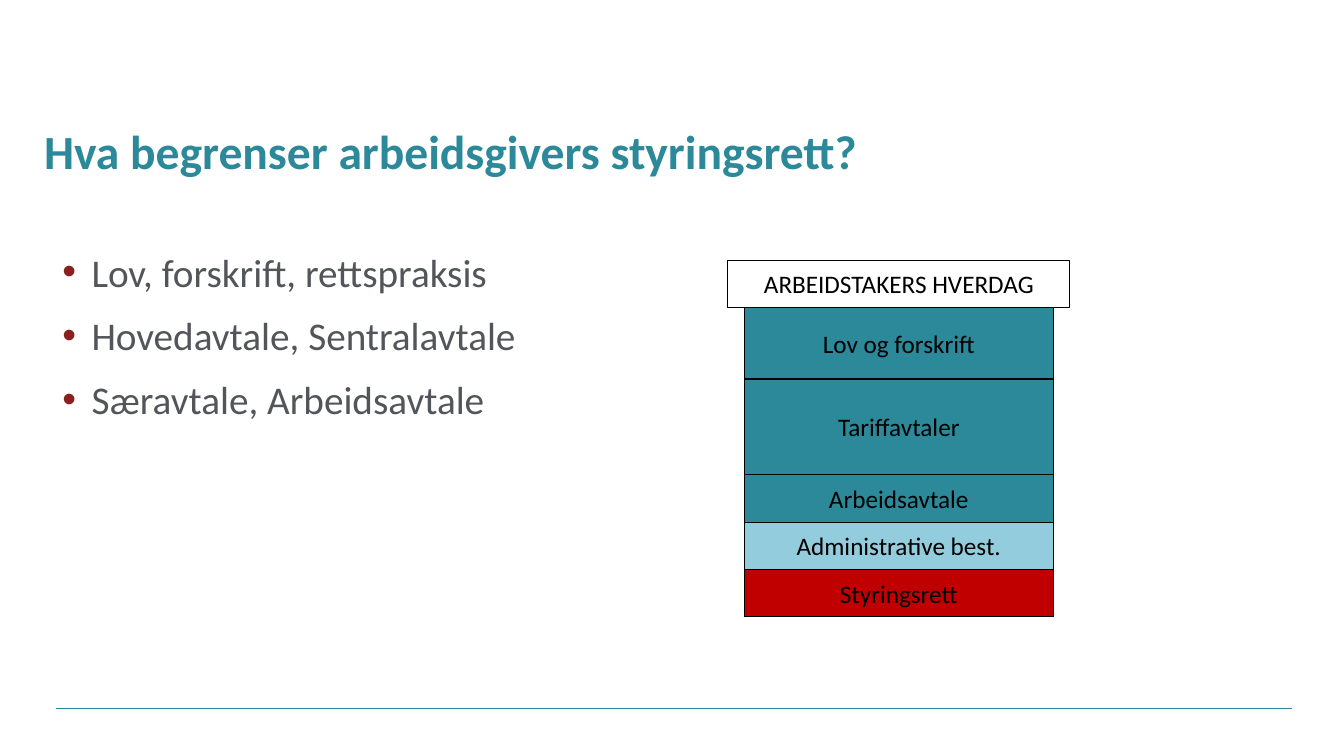
from dataclasses import dataclass

from lxml import etree
from pptx import Presentation
from pptx.dml.color import RGBColor
from pptx.enum.shapes import MSO_CONNECTOR, MSO_SHAPE
from pptx.enum.text import MSO_ANCHOR, PP_ALIGN
from pptx.oxml.ns import qn
from pptx.slide import Slide
from pptx.text.text import TextFrame, _Paragraph
from pptx.util import Inches, Pt

STRAIGHT = MSO_CONNECTOR.STRAIGHT
RECTANGLE = MSO_SHAPE.RECTANGLE
TOP, MIDDLE, BOTTOM = MSO_ANCHOR.TOP, MSO_ANCHOR.MIDDLE, MSO_ANCHOR.BOTTOM
LEFT, CENTER = PP_ALIGN.LEFT, PP_ALIGN.CENTER


@dataclass(frozen=True)
class Theme:
    font: str = "Calibri"
    teal: str = "2B899A"
    light_blue: str = "93CDDD"
    red: str = "C00000"
    white: str = "FFFFFF"
    black: str = "000000"
    gray: str = "52565A"
    bullet: str = "8B1F1E"
    title_size: float = 34
    body_size: float = 28
    label_size: float = 18


@dataclass(frozen=True)
class Layer:
    text: str
    height: float
    fill: str
    width: float = 3.07


THEME = Theme()
STACK_CENTER = 8.915
STACK_TOP = 2.58
LAYERS = [
    Layer("ARBEIDSTAKERS HVERDAG", 0.47, THEME.white, 3.39),
    Layer("Lov og forskrift", 0.71, THEME.teal),
    Layer("Tariffavtaler", 0.95, THEME.teal),
    Layer("Arbeidsavtale", 0.47, THEME.teal),
    Layer("Administrative best.", 0.47, THEME.light_blue),
    Layer("Styringsrett", 0.47, THEME.red),
]
LIMITS = [
    "Lov, forskrift, rettspraksis",
    "Hovedavtale, Sentralavtale",
    "Særavtale, Arbeidsavtale",
]


def rgb(color: str) -> RGBColor:
    return RGBColor.from_string(color)


def write(p: _Paragraph, text: str, size: float, color: str,
          bold: bool = False, align: PP_ALIGN = LEFT) -> None:
    p.alignment = align
    r = p.add_run()
    r.text = text
    formats = {"name": THEME.font, "size": Pt(size), "bold": bold}
    for name, value in formats.items():
        setattr(r.font, name, value)
    r.font.color.rgb = rgb(color)


def add_bullet(p: _Paragraph) -> None:
    pPr = p._p.get_or_add_pPr()
    indent = Inches(0.29)
    pPr.set("marL", str(indent))
    pPr.set("indent", str(-indent))
    color = etree.SubElement(pPr, qn("a:buClr"))
    etree.SubElement(color, qn("a:srgbClr"), val=THEME.bullet)
    etree.SubElement(pPr, qn("a:buFont"), typeface="Arial")
    etree.SubElement(pPr, qn("a:buChar"), char="•")


def add_text_box(s: Slide, left: float, top: float, width: float,
                 height: float, anchor: MSO_ANCHOR) -> TextFrame:
    box = s.shapes.add_textbox(*map(Inches, (left, top, width, height)))
    tf = box.text_frame
    tf.word_wrap = True
    tf.vertical_anchor = anchor
    return tf


def add_footer_line(s: Slide) -> None:
    ends = map(Inches, (0.56, 7.03, 12.81, 7.03))
    line = s.shapes.add_connector(STRAIGHT, *ends)
    line.line.color.rgb = rgb(THEME.teal)
    line.line.width = Pt(1)
    etree.SubElement(line._element.spPr, qn("a:effectLst"))


def add_title(s: Slide) -> None:
    tf = add_text_box(s, 0.34, 0.58, 10.7, 1.25, BOTTOM)
    write(tf.paragraphs[0], "Hva begrenser arbeidsgivers styringsrett?",
          THEME.title_size, THEME.teal, bold=True)


def add_limits(s: Slide) -> None:
    tf = add_text_box(s, 0.52, 2.41, 6.34, 4.79, TOP)
    for i, text in enumerate(LIMITS):
        p = tf.add_paragraph() if i else tf.paragraphs[0]
        add_bullet(p)
        if i:
            p.space_before = Pt(12)
        write(p, text, THEME.body_size, THEME.gray)


def add_layer(s: Slide, layer: Layer, top: float) -> None:
    left = STACK_CENTER - layer.width / 2
    bounds = map(Inches, (left, top, layer.width, layer.height))
    sp = s.shapes.add_shape(RECTANGLE, *bounds)
    sp.shadow.inherit = False
    sp.fill.solid()
    sp.fill.fore_color.rgb = rgb(layer.fill)
    sp.line.color.rgb = rgb(THEME.black)
    sp.line.width = Pt(0.75)
    tf = sp.text_frame
    tf.word_wrap = False
    tf.vertical_anchor = MIDDLE
    write(tf.paragraphs[0], layer.text, THEME.label_size, THEME.black,
          align=CENTER)


def add_stack(s: Slide) -> None:
    top = STACK_TOP
    for layer in LAYERS:
        add_layer(s, layer, top)
        top += layer.height


def main() -> None:
    prs = Presentation()
    prs.slide_width, prs.slide_height = Inches(13.33), Inches(7.5)
    s = prs.slides.add_slide(prs.slide_layouts[6])
    add_footer_line(s)
    add_title(s)
    add_limits(s)
    add_stack(s)
    prs.save("out.pptx")


if __name__ == "__main__":
    main()
